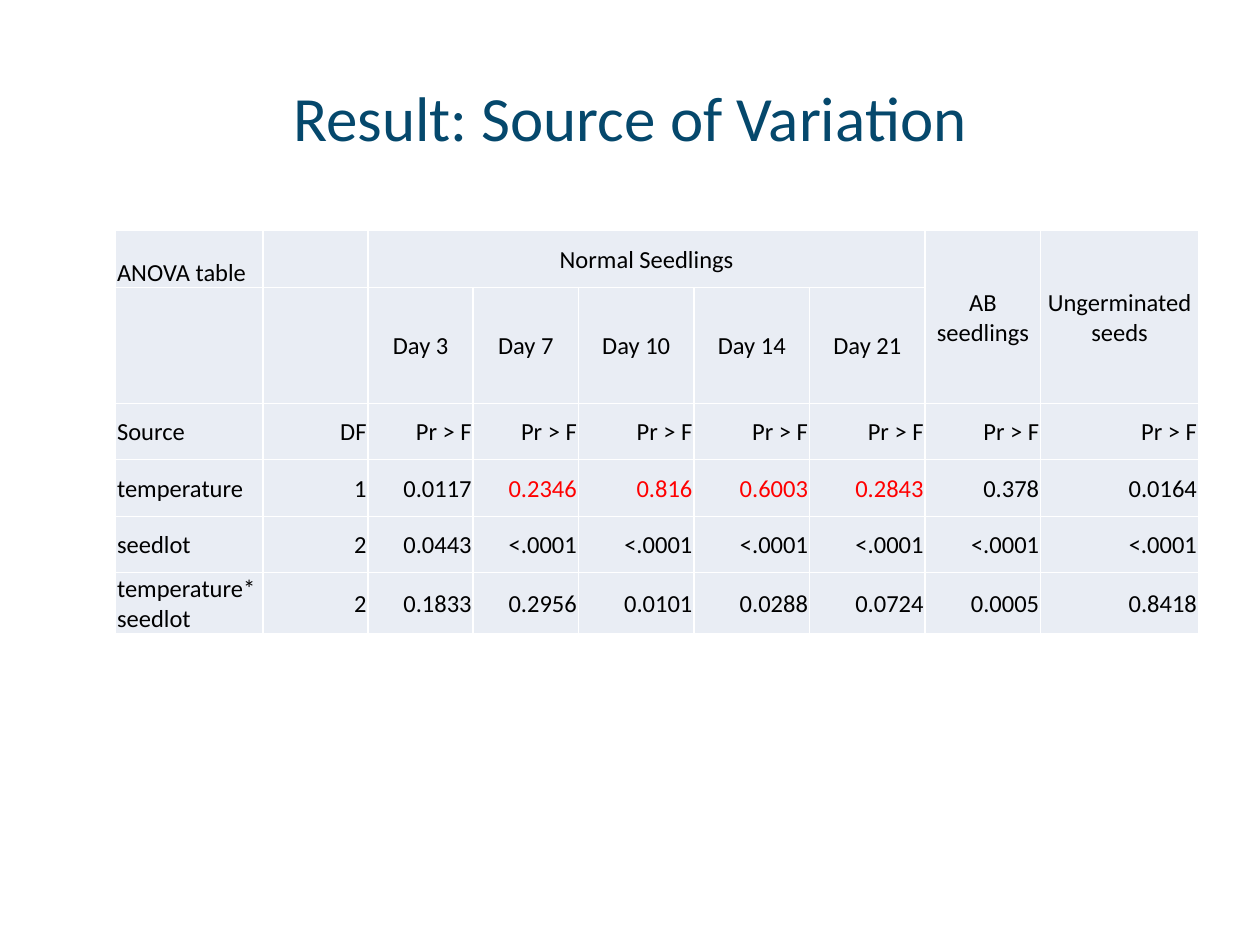
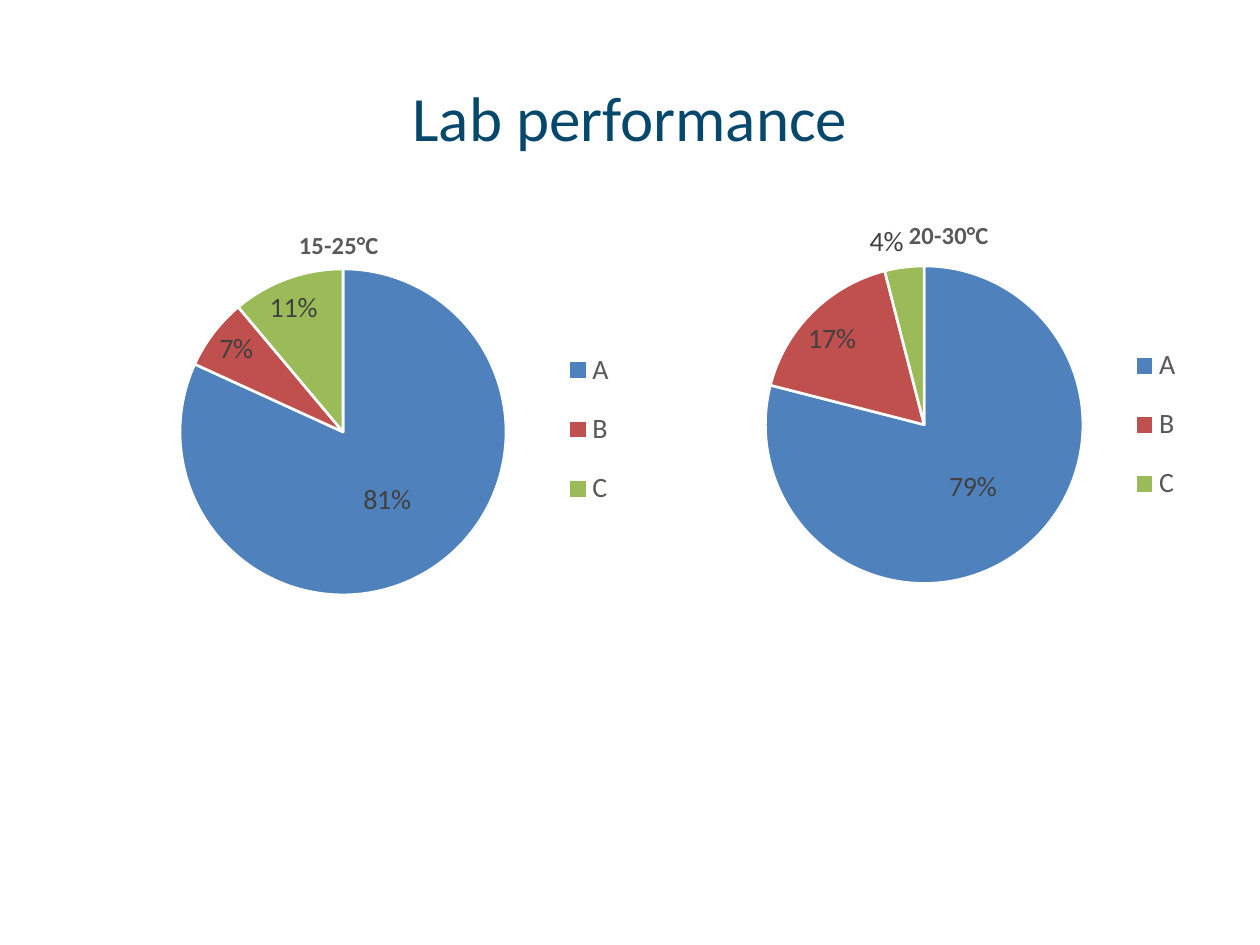
"""Build two slides: an ANOVA table and two pie charts of lab performance."""
from pptx import Presentation
from pptx.chart.data import CategoryChartData
from pptx.dml.color import RGBColor
from pptx.enum.chart import (XL_CHART_TYPE as ChartType, XL_LABEL_POSITION as LabelPosition,
                             XL_LEGEND_POSITION as LegendPosition)
from pptx.enum.text import MSO_ANCHOR as Anchor, PP_ALIGN as Align
from pptx.oxml import parse_xml
from pptx.oxml.ns import nsdecls, qn
from pptx.util import Cm, Pt

FONT = "Calibri"
COLORS = {
    "title": "05486C", "text": "000000", "alert": "FF0000", "cell": "E9EDF4", "rule": "FFFFFF",
    "chart_text": "595959", "label": "404040", "A": "4F81BD", "B": "C0504D", "C": "9BBB59",
}

TABLE_TITLE = "Result: Source of Variation"
ANOVA = [
    ["ANOVA table", "", "Normal Seedlings", "", "", "", "", "AB seedlings", "Ungerminated seeds"],
    ["", "", "Day 3", "Day 7", "Day 10", "Day 14", "Day 21", "", ""],
    ["Source", "DF"] + ["Pr > F"] * 7,
    ["temperature", "1", "0.0117", "0.2346", "0.816", "0.6003", "0.2843", "0.378", "0.0164"],
    ["seedlot", "2", "0.0443"] + ["<.0001"] * 6,
    ["temperature*seedlot", "2", "0.1833", "0.2956", "0.0101", "0.0288", "0.0724", "0.0005", "0.8418"],
]
HEADER_ROWS = 2
MERGES = [((0, 2), (0, 6)), ((0, 7), (1, 7)), ((0, 8), (1, 8))]
ALERT_CELLS = [(3, column) for column in range(3, 7)]
TABLE_LEFT, TABLE_TOP = 2.33, 4.65
COLUMN_WIDTHS = [2.97] + [2.12] * 3 + [2.33] * 4 + [3.18]
ROW_HEIGHTS = [1.15, 2.33] + [1.14] * 4

CHART_TITLE = "Lab performance"
GRADES = ["A", "B", "C"]
PIES = [
    {"name": "15-25°C", "shares": [0.81, 0.07, 0.11], "at": (1.9, 3.45, 11.53, 10.52),
     "title": (0.35, 0.1), "plot": (0.15, 0.18, 0.57, 0.64), "legend": (0.8, 0.3, 0.13, 0.39)},
    {"name": "20-30°C", "shares": [0.79, 0.17, 0.04], "at": (13.34, 3.81, 11.38, 9.7),
     "title": (0.43, 0.05), "plot": (0.17, 0.16, 0.59, 0.66), "legend": (0.81, 0.28, 0.13, 0.42)},
]


def style_font(font, size, color, bold=False):
    font.name, font.size, font.bold = FONT, Pt(size), bold
    font.color.rgb = RGBColor.from_string(COLORS[color])


def add_titled_page(deck, text):
    page = deck.slides.add_slide(deck.slide_layouts[5])
    title = page.shapes.title
    title.left, title.top, title.width, title.height = Cm(1.27), Cm(0.76), Cm(22.86), Cm(3.18)
    frame = title.text_frame
    frame.text, frame.vertical_anchor = text, Anchor.MIDDLE
    para = frame.paragraphs[0]
    para.alignment = Align.CENTER
    style_font(para.font, 36, "title")
    return page


def fill_cell(cell, text, row, column):
    cell.fill.solid()
    cell.fill.fore_color.rgb = RGBColor.from_string(COLORS["cell"])
    cell.margin_left = cell.margin_right = cell.margin_top = Cm(0.03)
    cell.margin_bottom = 0
    cell.vertical_anchor = Anchor.BOTTOM if (row, column) == (0, 0) else Anchor.MIDDLE
    cell.text = text
    para = cell.text_frame.paragraphs[0]
    if column == 0:
        para.alignment = Align.LEFT
    else:
        para.alignment = Align.CENTER if row < HEADER_ROWS else Align.RIGHT
    style_font(para.font, 14, "alert" if (row, column) in ALERT_CELLS else "text")
    properties = cell._tc.get_or_add_tcPr()
    for index, side in enumerate(("lnL", "lnR", "lnT", "lnB")):
        properties.insert(index, parse_xml(
            f'<a:{side} {nsdecls("a")} w="{Pt(1)}"><a:solidFill>'
            f'<a:srgbClr val="{COLORS["rule"]}"/></a:solidFill></a:{side}>'))


def add_anova_table(page):
    frame = page.shapes.add_table(
        len(ANOVA), len(ANOVA[0]), Cm(TABLE_LEFT), Cm(TABLE_TOP),
        Cm(sum(COLUMN_WIDTHS)), Cm(sum(ROW_HEIGHTS)))
    table = frame.table
    table.first_row = table.horz_banding = False
    for column, width in zip(table.columns, COLUMN_WIDTHS):
        column.width = Cm(width)
    for row, height in zip(table.rows, ROW_HEIGHTS):
        row.height = Cm(height)
    for row, texts in enumerate(ANOVA):
        for column, text in enumerate(texts):
            fill_cell(table.cell(row, column), text, row, column)
    for first, last in MERGES:
        table.cell(*first).merge(table.cell(*last))


def place_part(chart, tag, index, fractions, target=""):
    part = chart.element.find(".//" + qn(tag))
    for layout in part.findall(qn("c:layout")):
        part.remove(layout)
    modes = "".join(f'<c:{axis}Mode val="edge"/>' for axis in "xy")
    values = "".join(f'<c:{key} val="{value}"/>' for key, value in zip("xywh", fractions))
    part.insert(index, parse_xml(
        f'<c:layout {nsdecls("c")}><c:manualLayout>{target}{modes}{values}'
        '</c:manualLayout></c:layout>'))


def add_pie(page, pie):
    data = CategoryChartData(number_format="0%")
    data.categories = GRADES
    data.add_series(pie["name"], pie["shares"])
    chart = page.shapes.add_chart(ChartType.PIE, *map(Cm, pie["at"]), data).chart
    style_font(chart.font, 10, "text")
    chart.has_title = True
    chart.chart_title.text_frame.text = pie["name"]
    style_font(chart.chart_title.text_frame.paragraphs[0].font, 14, "chart_text", bold=True)
    chart.has_legend = True
    chart.legend.position = LegendPosition.RIGHT
    chart.legend.include_in_layout = False
    style_font(chart.legend.font, 16, "chart_text")

    plot = chart.plots[0]
    plot.vary_by_categories = True
    series = plot.series[0]
    labels = series.data_labels
    labels.show_value, labels.show_percentage = True, False
    labels.number_format, labels.number_format_is_linked = "0%", False
    labels.position = LabelPosition.BEST_FIT
    style_font(labels.font, 16, "label")
    for index, grade in enumerate(GRADES):
        wedge = series.points[index].format
        wedge.fill.solid()
        wedge.fill.fore_color.rgb = RGBColor.from_string(COLORS[grade])
        wedge.line.color.rgb = RGBColor.from_string(COLORS["rule"])
        wedge.line.width = Pt(1.5)
    largest = series.points[0].data_label
    style_font(largest.font, 16, "label")
    largest.position = LabelPosition.CENTER

    place_part(chart, "c:title", 1, pie["title"])
    place_part(chart, "c:legend", 1, pie["legend"])
    place_part(chart, "c:plotArea", 0, pie["plot"], '<c:layoutTarget val="inner"/>')


def main():
    deck = Presentation()
    deck.slide_width, deck.slide_height = Cm(25.4), Cm(19.05)
    add_anova_table(add_titled_page(deck, TABLE_TITLE))
    page = add_titled_page(deck, CHART_TITLE)
    for pie in PIES:
        add_pie(page, pie)
    deck.save("out.pptx")


if __name__ == "__main__":
    main()
